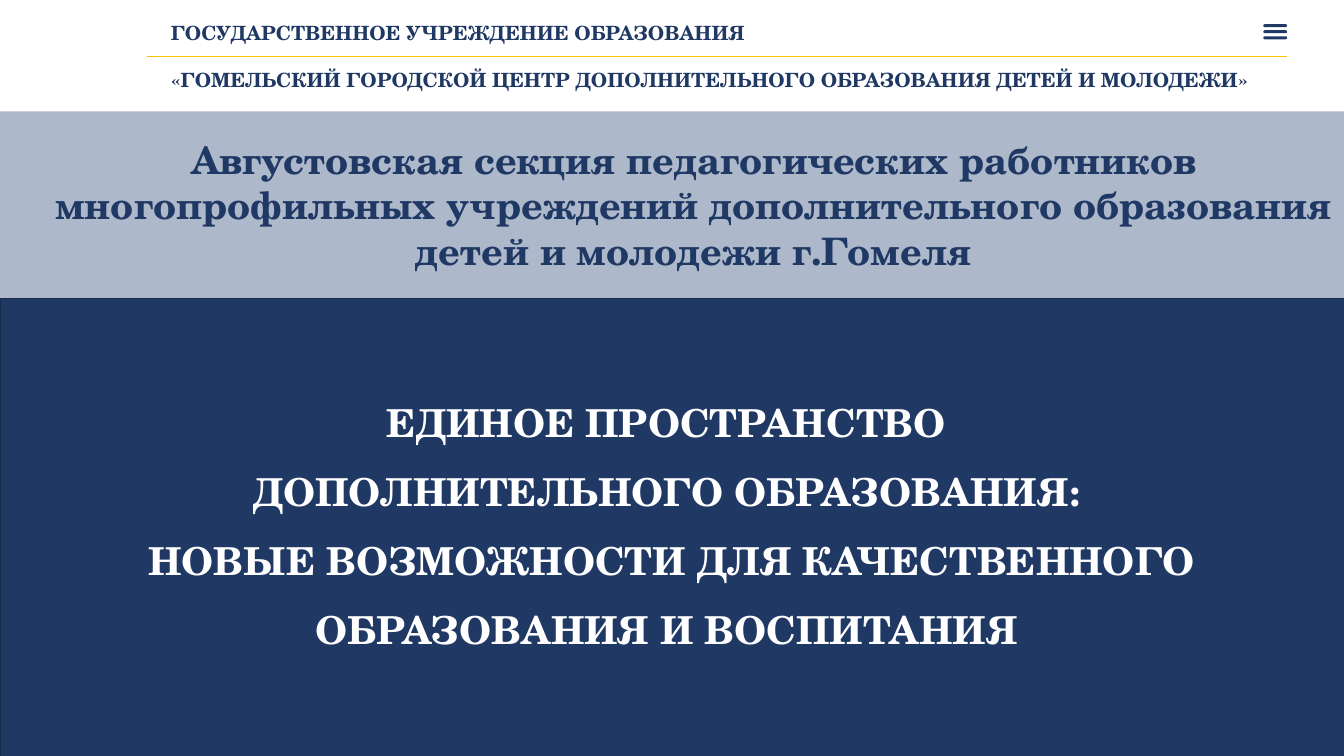
import pptx
import pptx.dml.color
import pptx.enum.shapes
import pptx.enum.text
import pptx.oxml
import pptx.oxml.ns
import pptx.util

NAVY = pptx.dml.color.RGBColor(0x20, 0x38, 0x64)
DARK_NAVY = pptx.dml.color.RGBColor(0x18, 0x29, 0x4A)
GREY_BLUE = pptx.dml.color.RGBColor(0xAD, 0xB9, 0xCA)
GOLD = pptx.dml.color.RGBColor(0xFF, 0xC0, 0x00)
WHITE = pptx.dml.color.RGBColor(0xFF, 0xFF, 0xFF)

SHAPES = pptx.enum.shapes.MSO_SHAPE
LEFT = pptx.enum.text.PP_ALIGN.LEFT
CENTER = pptx.enum.text.PP_ALIGN.CENTER


def write(frame, lines, size, color, align=LEFT, spacing=1.0, gap=0, font="TeX Gyre Schola"):
    frame.word_wrap = True
    frame.auto_size = pptx.enum.text.MSO_AUTO_SIZE.NONE
    frame.vertical_anchor = pptx.enum.text.MSO_ANCHOR.TOP
    for index, line in enumerate(lines):
        para = frame.paragraphs[0] if index == 0 else frame.add_paragraph()
        para.alignment = align
        para.line_spacing = spacing
        para.space_before = pptx.util.Pt(gap if index else 0)
        span = para.add_run()
        span.text = line
        span.font.name = font
        span.font.size = pptx.util.Pt(size)
        span.font.bold = True
        span.font.color.rgb = color


class Page:
    """Places elements by percentages of the slide's width and height."""

    def __init__(self, deck):
        self.deck = deck
        self.slide = deck.slides.add_slide(deck.slide_layouts[0])
        self.shapes = self.slide.shapes

    def across(self, share):
        return round(self.deck.slide_width * share / 100)

    def down(self, share):
        return round(self.deck.slide_height * share / 100)

    def area(self, left, top, width, height):
        return self.across(left), self.down(top), self.across(width), self.down(height)

    def block(self, area, fill, line=None, kind=SHAPES.RECTANGLE):
        box = self.shapes.add_shape(kind, *self.area(*area))
        box.shadow.inherit = False
        box.fill.solid()
        box.fill.fore_color.rgb = fill
        if line is None:
            box.line.fill.background()
        else:
            box.line.color.rgb = line
            box.line.width = pptx.util.Pt(1)
        return box

    def rule(self, left, right, top, color):
        line = self.shapes.add_connector(
            pptx.enum.shapes.MSO_CONNECTOR.STRAIGHT,
            self.across(left), self.down(top), self.across(right), self.down(top))
        line.line.color.rgb = color
        line.line.width = pptx.util.Pt(1)
        line._element.spPr.append(pptx.oxml.parse_xml(
            "<a:effectLst %s/>" % pptx.oxml.ns.nsdecls("a")))

    def text(self, area, lines, **style):
        box = self.shapes.add_textbox(*self.area(*area))
        write(box.text_frame, lines, **style)

    def placeholder(self, index, area, lines, **style):
        box = self.slide.placeholders[index]
        box.left, box.top, box.width, box.height = self.area(*area)
        self.shapes._spTree.append(box._element)
        write(box.text_frame, lines, **style)

    def menu_icon(self, left, top, width, color, bar=0.4, pitch=0.8):
        for row in range(3):
            stripe = self.block((left, top + row * pitch, width, bar), color,
                                kind=SHAPES.ROUNDED_RECTANGLE)
            stripe.adjustments[0] = 0.5


def main():
    deck = pptx.Presentation()
    deck.slide_width = pptx.util.Inches(26.66)
    deck.slide_height = pptx.util.Inches(15)
    page = Page(deck)

    page.block((0, 14.73, 100, 24.77), GREY_BLUE)
    page.block((0, 39.5, 100, 60.5), NAVY, line=DARK_NAVY)
    page.text((12.34, 2.4, 83.65, 10.07), [
        "ГОСУДАРСТВЕННОЕ УЧРЕЖДЕНИЕ ОБРАЗОВАНИЯ",
        "«ГОМЕЛЬСКИЙ ГОРОДСКОЙ ЦЕНТР ДОПОЛНИТЕЛЬНОГО ОБРАЗОВАНИЯ ДЕТЕЙ И МОЛОДЕЖИ»",
    ], size=28, color=NAVY, gap=33.6)
    page.rule(10.92, 95.76, 7.47, GOLD)
    page.menu_icon(94, 3.2, 1.76, NAVY)
    page.placeholder(0, (0, 49.33, 100, 37.67), [
        "ЕДИНОЕ ПРОСТРАНСТВО ",
        "ДОПОЛНИТЕЛЬНОГО ОБРАЗОВАНИЯ: ",
        "НОВЫЕ ВОЗМОЖНОСТИ ДЛЯ КАЧЕСТВЕННОГО ОБРАЗОВАНИЯ И ВОСПИТАНИЯ ",
    ], size=55, color=WHITE, align=CENTER, spacing=1.5)
    page.placeholder(1, (3.26, 17.73, 96.74, 18.87), [
        "Августовская секция педагогических работников многопрофильных "
        "учреждений дополнительного образования детей и молодежи г.Гомеля",
    ], size=54, color=NAVY, align=CENTER)

    deck.save("out.pptx")


if __name__ == "__main__":
    main()
